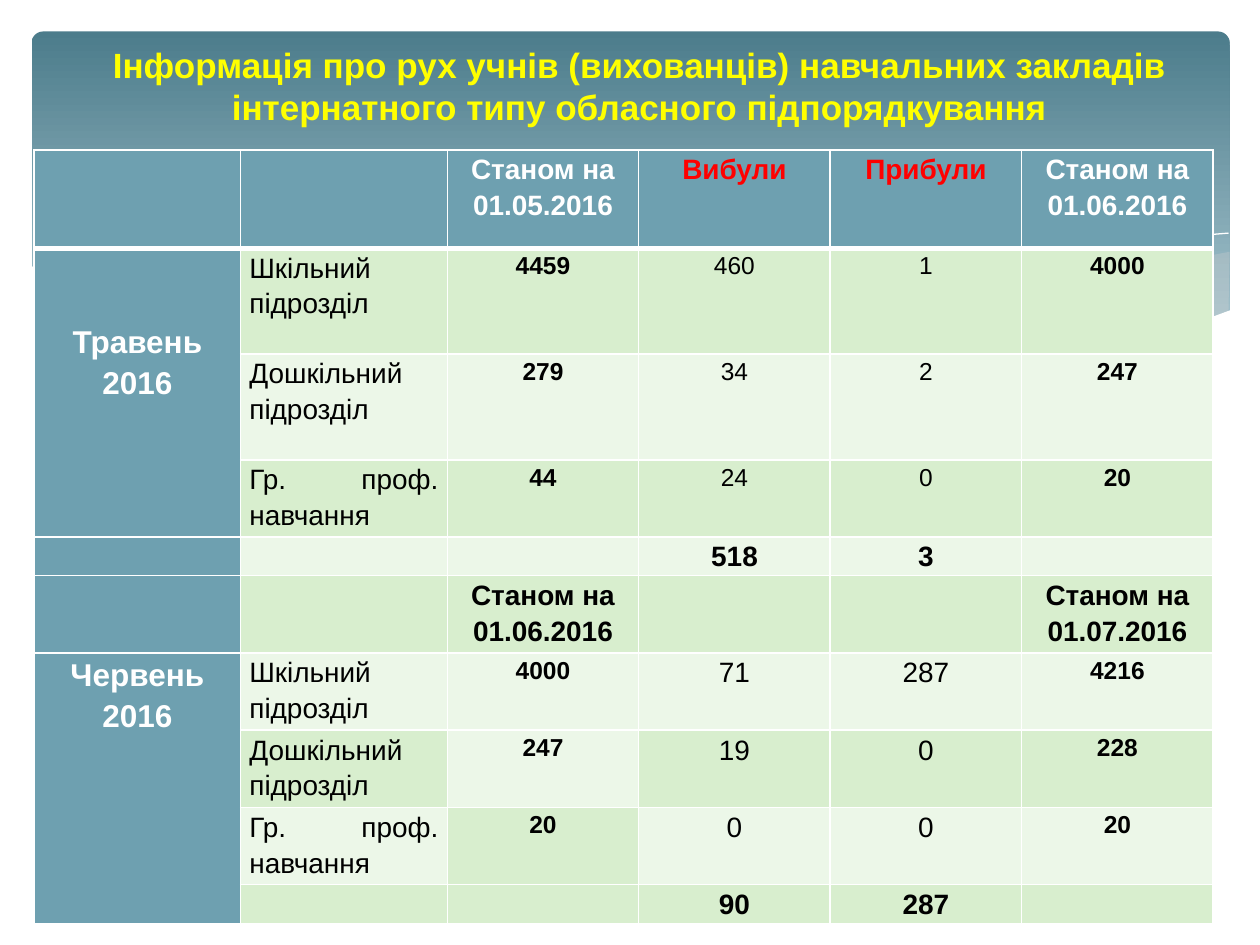
from lxml import etree
from pptx import Presentation
from pptx.dml.color import RGBColor
from pptx.enum.shapes import MSO_SHAPE
from pptx.enum.text import MSO_ANCHOR, PP_ALIGN
from pptx.oxml.ns import qn
from pptx.util import Inches, Pt

ROUND = MSO_SHAPE.ROUNDED_RECTANGLE
MIDDLE = MSO_ANCHOR.MIDDLE
CENTER, JUSTIFY = PP_ALIGN.CENTER, PP_ALIGN.JUSTIFY
FONT = "Arial"
COLORS = {
    "dark": "4C7C8B", "pale": "A8C6D0", "haze": "D4D2D0", "white": "FFFFFF",
    "title": "FFFF00", "head": "6EA0B0", "red": "FF0000", "black": "000000",
    "green": "D8EECE", "light": "ECF7E8",
}

# Waves: left, top, offsets from there, fill, opacity in percent (no fill: open line)
WAVES = [
    (6.61, 2, [(3.14, 0), (2.6, .1), (2, .23), (1.44, .37), (.92, .48), (.45, .57),
               (0, .65), (.44, .71), (.84, .75), (1.2, .77), (1.53, .78), (1.93, .76),
               (2.28, .72), (2.6, .65), (2.88, .57), (3.14, .47), (3.15, 0)],
     "haze", 29),
    (2.86, 1.85, [(6.07, .88), (5.51, .8), (4.89, .69), (4.2, .55), (3.43, .37),
                  (2.98, .26), (2.55, .18), (2.16, .11), (1.79, .06), (1.34, .02),
                  (.94, 0), (.58, .01), (.27, .03), (0, .06), (.56, .14), (1.18, .26),
                  (1.63, .37), (2.44, .55), (3.15, .7), (3.79, .81), (4.36, .89),
                  (4.87, .92), (5.32, .93), (5.71, .92)],
     "haze", 40),
    (3.09, 1.87, [(0, .08), (.35, .03), (.78, 0), (1.24, 0), (1.8, .03), (2.47, .1),
                  (3.27, .21), (4.18, .39), (4.86, .54), (5.6, .74), (5.98, .85)],
     None, 100),
    (6.13, 1.85, [(0, .72), (.59, .56), (1.07, .44), (1.63, .31), (2.23, .19),
                  (2.82, .09), (3.25, .03), (3.62, 0)],
     None, 100),
    (.23, 1.84, [(9.54, .62), (9.27, .72), (8.97, .81), (8.64, .87), (8.27, .91),
                 (7.86, .93), (7.38, .91), (6.85, .86), (6.25, .78), (5.56, .66),
                 (4.8, .49), (4.24, .36), (3.68, .23), (3.17, .13), (2.69, .06),
                 (2.27, .02), (1.88, 0), (1.54, 0), (1.23, .01), (.96, .03),
                 (.72, .07), (.53, .11), (.36, .15), (.23, .19), (.06, .26),
                 (0, .29), (0, 1.45), (9.54, 1.45)],
     "white", 100),
]

TITLE = ("Інформація про рух учнів (вихованців) навчальних закладів "
         "інтернатного типу обласного підпорядкування")
SCHOOL, KINDER, TRADE = "Шкільний підрозділ", "Дошкільний підрозділ", "Гр. проф. навчання"
ROWS = [
    ["", "", "Станом на 01.05.2016", "Вибули", "Прибули", "Станом на 01.06.2016"],
    ["Травень 2016", SCHOOL, "4459", "460", "1", "4000"],
    ["", KINDER, "279", "34", "2", "247"],
    ["", TRADE, "44", "24", "0", "20"],
    ["", "", "", "518", "3", ""],
    ["", "", "Станом на 01.06.2016", "", "", "Станом на 01.07.2016"],
    ["Червень\n2016", SCHOOL, "4000", "71", "287", "4216"],
    ["", KINDER, "247", "19", "0", "228"],
    ["", TRADE, "20", "0", "0", "20"],
    ["", "", "", "90", "287", ""],
]
WIDTHS = [1.64, 1.64, 1.52, 1.52, 1.52, 1.52]
HEIGHTS = [.78, .84, .84, .57, .29, .57, .57, .57, .57, .28]
JUNE = 6            # first June row
BOLD_ROWS = (0, 4, 5, 9)
SPANS = [(1, 3), (6, 9)]
SWAPS = {(7, 2): "light", (8, 2): "green"}


def rgb(name):
    return RGBColor.from_string(COLORS[name])


def add_panel(slide, left, top, width, height):
    panel = slide.shapes.add_shape(
        ROUND, Inches(left), Inches(top), Inches(width), Inches(height))
    panel.adjustments[0] = 0.034
    panel.shadow.inherit = False
    panel.line.fill.background()
    panel.fill.gradient()
    panel.fill.gradient_angle = 270
    for stop, name, pos in zip(panel.fill.gradient_stops, ("dark", "pale"), (0, 0.9)):
        stop.color.rgb = rgb(name)
        stop.position = pos


def add_wave(slide, left, top, points, fill, alpha):
    dots = [(Inches(left + x), Inches(top + y)) for x, y in points]
    pen = slide.shapes.build_freeform(*dots[0])
    pen.add_line_segments(dots[1:], close=fill is not None)
    wave = pen.convert_to_shape()
    wave.shadow.inherit = False
    if fill is None:
        wave.fill.background()
        wave.line.color.rgb = rgb("white")
        wave.line.width = Pt(0)
        return
    wave.line.fill.background()
    wave.fill.solid()
    wave.fill.fore_color.rgb = rgb(fill)
    if alpha < 100:
        tint = wave.fill._xPr.find(".//" + qn("a:srgbClr"))
        etree.SubElement(tint, qn("a:alpha"), val=str(alpha * 1000))


def style(para, size, color, bold, align):
    para.alignment = align
    font = para.font
    font.name, font.size, font.bold = FONT, Pt(size), bold
    font.color.rgb = rgb(color)


def add_title(slide, left, top, width, height):
    box = slide.shapes.add_textbox(
        Inches(left), Inches(top), Inches(width), Inches(height))
    frame = box.text_frame
    frame.word_wrap = True
    frame.vertical_anchor = MIDDLE
    para = frame.paragraphs[0]
    para.text = TITLE
    para.line_spacing = Pt(24)
    style(para, 20, "title", True, CENTER)


def set_border(cell, row):
    props = cell._tc.get_or_add_tcPr()
    for side in "LRTB":
        thick = (row, side) in ((0, "B"), (1, "T"))
        line = etree.SubElement(
            props, qn("a:ln" + side), w=str(Pt(3 if thick else 1)))
        paint = etree.SubElement(line, qn("a:solidFill"))
        etree.SubElement(paint, qn("a:srgbClr"), val=COLORS["white"])


def cell_font(row, col):
    """Size, colour, weight and alignment by place in the table."""
    if row == 0:
        return 16, "red" if col in (3, 4) else "white", True, CENTER
    if col == 0:
        return 18, "white", True, CENTER
    if col == 1:
        return 16, "black", False, JUSTIFY
    if row in BOLD_ROWS:
        return 16, "black", True, CENTER
    if col in (2, 5):
        return 14, "black", True, CENTER
    return 16 if row >= JUNE else 14, "black", False, CENTER


def fill_cell(cell, row, col, text):
    set_border(cell, row)
    band = "green" if row % 2 else "light"
    name = "head" if row == 0 or col == 0 else SWAPS.get((row, col), band)
    cell.fill.solid()
    cell.fill.fore_color.rgb = rgb(name)
    cell.margin_left = cell.margin_right = Inches(0.07)
    cell.margin_top = Inches(0.57 if (row, col) == (1, 0) else 0)
    cell.margin_bottom = 0
    cell.text = text
    for para in cell.text_frame.paragraphs:
        if text:
            para.line_spacing = 1.15
            style(para, *cell_font(row, col))
        else:  # keeps empty cells from stretching low rows
            etree.SubElement(para._p, qn("a:endParaRPr"), sz="1200")


def add_grid(slide, left, top):
    frame = slide.shapes.add_table(
        len(ROWS), len(WIDTHS), Inches(left), Inches(top),
        Inches(sum(WIDTHS)), Inches(sum(HEIGHTS)))
    table = frame.table
    table.first_row = table.horz_banding = False
    for col, width in zip(table.columns, WIDTHS):
        col.width = Inches(width)
    for row, height in zip(table.rows, HEIGHTS):
        row.height = Inches(height)
    for r, texts in enumerate(ROWS):
        for c, text in enumerate(texts):
            fill_cell(table.cell(r, c), r, c, text)
    for first, last in SPANS:
        table.cell(first, 0).merge(table.cell(last, 0))


def main():
    deck = Presentation()
    deck.slide_width, deck.slide_height = Inches(10), Inches(7.5)
    slide = deck.slides.add_slide(deck.slide_layouts[6])
    # Backdrop
    add_panel(slide, 0.25, 0.25, 9.51, 2.7)
    for wave in WAVES:
        add_wave(slide, *wave)
    # Heading and table
    add_title(slide, 0.5, 0.2, 9.15, 0.95)
    add_grid(slide, 0.27, 1.19)
    deck.save("out.pptx")


if __name__ == "__main__":
    main()
